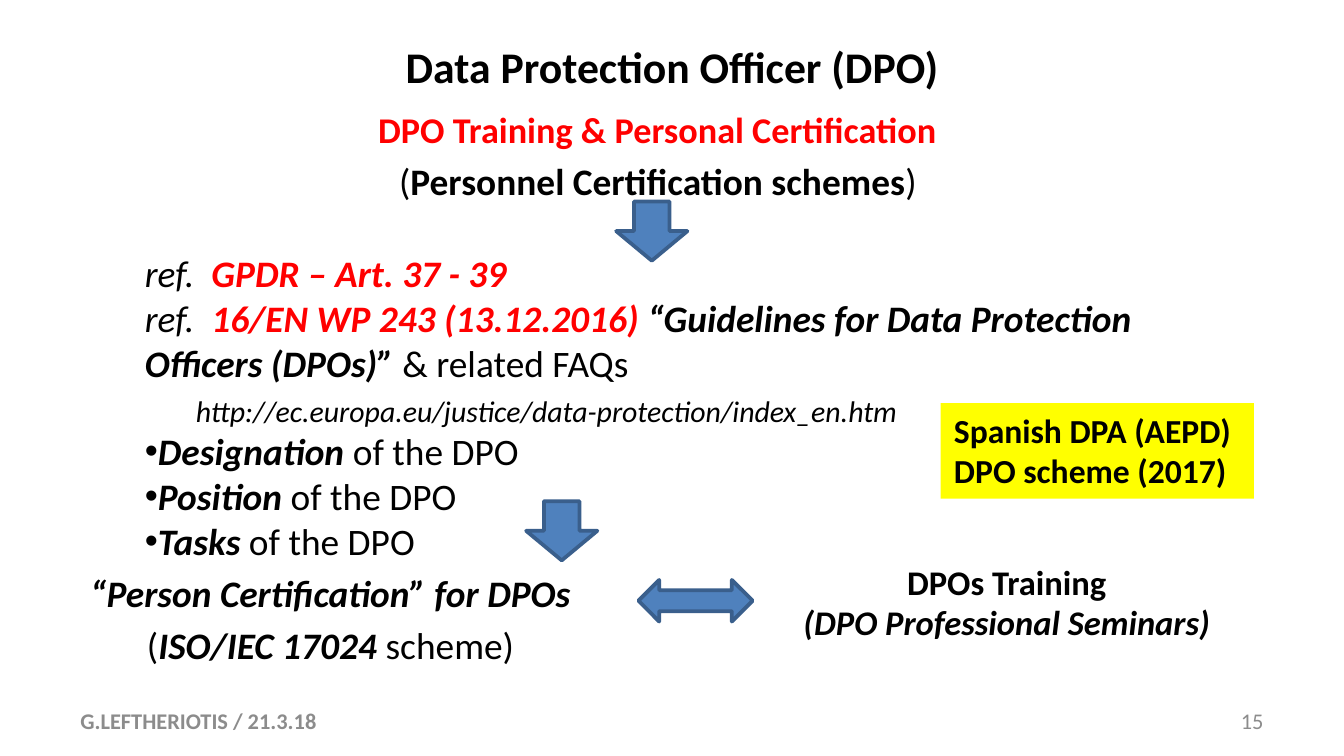
from lxml import etree
from pptx import Presentation
from pptx.dml.color import RGBColor
from pptx.enum.shapes import MSO_SHAPE
from pptx.enum.text import MSO_ANCHOR, PP_ALIGN
from pptx.oxml.ns import qn
from pptx.util import Pt

LEFT, CENTER, RIGHT = PP_ALIGN.LEFT, PP_ALIGN.CENTER, PP_ALIGN.RIGHT
TOP, MIDDLE = MSO_ANCHOR.TOP, MSO_ANCHOR.MIDDLE
RECTANGLE = MSO_SHAPE.RECTANGLE
DOWN_ARROW, DOUBLE_ARROW = MSO_SHAPE.DOWN_ARROW, MSO_SHAPE.LEFT_RIGHT_ARROW

PX = 4572  # 200 px to the inch
THEME = {
    "font": "Calibri",
    "ink": "000000", "accent": "FF0000", "muted": "8C8C8C",
    "arrow": "4F81BD", "arrow_edge": "3A5F8C", "highlight": "FFFF00",
    "title": 23.4, "subtitle": 19.4, "body": 20, "training": 18.5,
    "callout": 18, "link": 16, "footer": 12,
}

deck = Presentation()
deck.slide_width, deck.slide_height = 2000 * PX, 1125 * PX
page = deck.slides.add_slide(deck.slide_layouts[6])


def add_box(place, shape=None, fill=None, edge=None):
    """Add a text box, or a preset shape when one is named."""
    bounds = [length * PX for length in place]
    if shape is None:
        return page.shapes.add_textbox(*bounds)
    box = page.shapes.add_shape(shape, *bounds)
    box.shadow.inherit = False
    box.fill.solid()
    box.fill.fore_color.rgb = RGBColor.from_string(THEME[fill])
    if edge:
        box.line.color.rgb = RGBColor.from_string(THEME[edge])
        box.line.width = Pt(2)
    else:
        box.line.fill.background()
    return box


def write(box, runs, size="body", color="ink", align=LEFT, anchor=TOP,
          before=0, spacing=None, indent=0, bullet=False):
    """Add one paragraph; runs are (text, marks), marks from bold, italic, accent."""
    frame = box.text_frame
    frame.word_wrap = True
    frame.vertical_anchor = anchor
    para = frame.add_paragraph() if frame.text else frame.paragraphs[0]
    para.alignment = align
    if before:
        para.space_before = Pt(before)
    if spacing:
        para.line_spacing = spacing
    properties = para._p.get_or_add_pPr()
    if indent:
        properties.set("marL", str(indent * PX))
    if bullet:
        etree.SubElement(properties, qn("a:buFont")).set("typeface", "Arial")
        etree.SubElement(properties, qn("a:buChar")).set("char", "•")
    for text, marks in runs:
        span = para.add_run()
        span.text = text
        span.font.name = THEME["font"]
        span.font.size = Pt(THEME[size])
        span.font.bold = "bold" in marks
        span.font.italic = "italic" in marks
        shade = "accent" if "accent" in marks else color
        span.font.color.rgb = RGBColor.from_string(THEME[shade])


# Title and subtitle
title = add_box((100, 46, 1800, 104))
write(title, [("Data Protection Officer (DPO)", "bold")],
      size="title", align=CENTER, anchor=MIDDLE)

subtitle = add_box((259, 150, 1440, 138))
write(subtitle, [("DPO Training & Personal Certification", "bold accent")],
      size="subtitle", align=CENTER)
write(subtitle, [("(", ""), ("Personnel Certification schemes", "bold"), (")", "")],
      align=CENTER, before=4)

# References and the three DPO topics
references = add_box((196, 363, 1588, 492))
write(references, [("ref.  ", "italic"), ("GPDR – Art. 37 - 39", "bold italic accent")])
write(references, [
    ("ref.  ", "italic"),
    ("16/EN WP 243 (13.12.2016) ", "bold italic accent"),
    ("“Guidelines for Data Protection Officers (DPOs)” ", "bold italic"),
    ("& related FAQs", ""),
])
write(references, [("http://ec.europa.eu/justice/data-protection/index_en.htm", "italic")],
      size="link", before=4, indent=76)
for topic in ("Designation", "Position", "Tasks"):
    write(references, [(topic, "bold italic"), (" of the DPO", "")], bullet=True)

# Training and certification
training = add_box((1106, 837, 784, 138))
write(training, [("DPOs Training", "bold")],
      size="training", align=CENTER, spacing=0.8)
write(training, [("(DPO Professional Seminars)", "bold italic")],
      size="training", align=CENTER, spacing=0.8, before=3.7)

certification = add_box((48, 838, 888, 138))
write(certification, [("“Person Certification” for DPOs", "bold italic")], align=CENTER)
write(certification, [("(", ""), ("ISO/IEC 17024 ", "bold italic"), ("scheme)", "")],
      align=CENTER, before=4)

# Arrows
for shape, place in (
    (DOWN_ARROW, (917, 300, 106, 88)),
    (DOWN_ARROW, (783, 746, 106, 88)),
    (DOUBLE_ARROW, (950, 863, 170, 62)),
):
    add_box(place, shape, fill="arrow", edge="arrow_edge")

# Highlighted scheme
callout = add_box((1400, 600, 466, 142), RECTANGLE, fill="highlight")
for line in ("Spanish DPA (AEPD)", "DPO scheme (2017)"):
    write(callout, [(line, "bold")], size="callout")

# Footer
for left, text, marks, align in (
    (100, "G.LEFTHERIOTIS / 21.3.18", "bold", LEFT),
    (1434, "15", "", RIGHT),
):
    footer = add_box((left, 1043, 466, 60))
    write(footer, [(text, marks)], size="footer", color="muted",
          align=align, anchor=MIDDLE)

deck.save("out.pptx")
